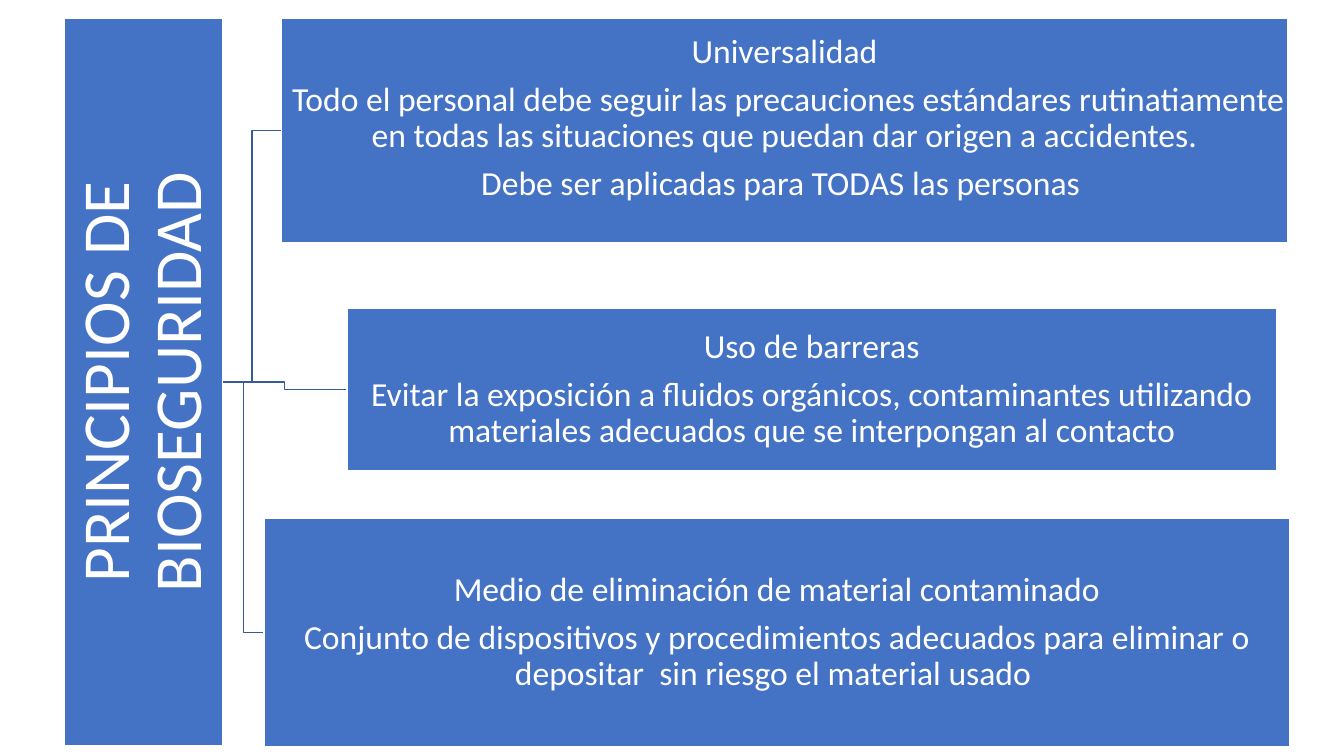
from pptx import Presentation
from pptx import util as u
from pptx.dml.color import RGBColor
from pptx.enum import shapes, text
from pptx.oxml.ns import qn
from lxml import etree

BLUE, LINE, WHITE = "4472C4", "365B9D", "FFFFFF"
FONT = "Calibri"
TITLE = "PRINCIPIOS DE BIOSEGURIDAD"
TITLE_BOX = (0.64, 0.18, 1.57, 7.22)
# box (left, top, width, height), extra bottom inset, paragraphs
PRINCIPLES = [
    ((2.79, 0.18, 9.98, 2.23), 0.24, [
        "Universalidad",
        " Todo el personal debe seguir las precauciones estándares rutinatiamente "
        "en todas las situaciones que puedan dar origen a accidentes.",
        "Debe ser aplicadas para TODAS las personas "]),
    ((3.44, 3.06, 9.22, 1.61), 0, [
        "Uso de barreras",
        "Evitar la exposición a fluidos orgánicos, contaminantes utilizando "
        "materiales adecuados que se interpongan al contacto"]),
    ((2.62, 5.14, 10.17, 2.27), 0, [
        "Medio de eliminación de material contaminado",
        "Conjunto de dispositivos y procedimientos adecuados para eliminar o "
        "depositar  sin riesgo el material usado "]),
]


def color(value):
    return RGBColor.from_string(value)


def add_panel(page, box, paragraphs, size, inset, extra_bottom=0):
    """Add a blue rectangle with centred white text."""
    panel = page.shapes.add_shape(shapes.MSO_SHAPE.RECTANGLE, *map(u.Inches, box))
    panel.shadow.inherit = False
    panel.fill.solid()
    panel.fill.fore_color.rgb = color(BLUE)
    panel.line.color.rgb = color(WHITE)
    panel.line.width = u.Pt(1)
    frame = panel.text_frame
    frame.word_wrap = True
    frame.vertical_anchor = text.MSO_ANCHOR.MIDDLE
    frame.margin_left = frame.margin_right = frame.margin_top = u.Inches(inset)
    frame.margin_bottom = u.Inches(inset + extra_bottom)
    for index, words in enumerate(paragraphs):
        para = frame.add_paragraph() if index else frame.paragraphs[0]
        para.alignment = text.PP_ALIGN.CENTER
        para.line_spacing = 0.9
        para.space_after = u.Pt(size * 0.35)
        span = para.add_run()
        span.text = words
        span.font.name = FONT
        span.font.size = u.Pt(size)
        span.font.color.rgb = color(WHITE)
    return panel


def add_title(page, box):
    """Add the title panel, turned to read upwards inside the box."""
    left, top, width, height = box
    shift = (height - width) / 2
    turned = (left - shift, top + shift, height, width)
    add_panel(page, turned, [TITLE], 48, 0.03).rotation = 270


def add_branch(page, parent, child):
    """Join the parent's right side to the child's left side."""
    ends = (parent[0] + parent[2], parent[1] + parent[3] / 2,
            child[0], child[1] + child[3] / 2)
    branch = page.shapes.add_connector(shapes.MSO_CONNECTOR.ELBOW, *map(u.Inches, ends))
    branch.line.color.rgb = color(LINE)
    branch.line.width = u.Pt(1)
    etree.SubElement(branch._element.spPr, qn("a:effectLst"))


def main():
    deck = Presentation()
    deck.slide_width, deck.slide_height = u.Inches(13.33), u.Inches(7.5)
    page = deck.slides.add_slide(deck.slide_layouts[6])
    for box, _, _ in reversed(PRINCIPLES):
        add_branch(page, TITLE_BOX, box)
    add_title(page, TITLE_BOX)
    for box, extra_bottom, paragraphs in PRINCIPLES:
        add_panel(page, box, paragraphs, 24, 0.02, extra_bottom)
    deck.save("out.pptx")


if __name__ == "__main__":
    main()
